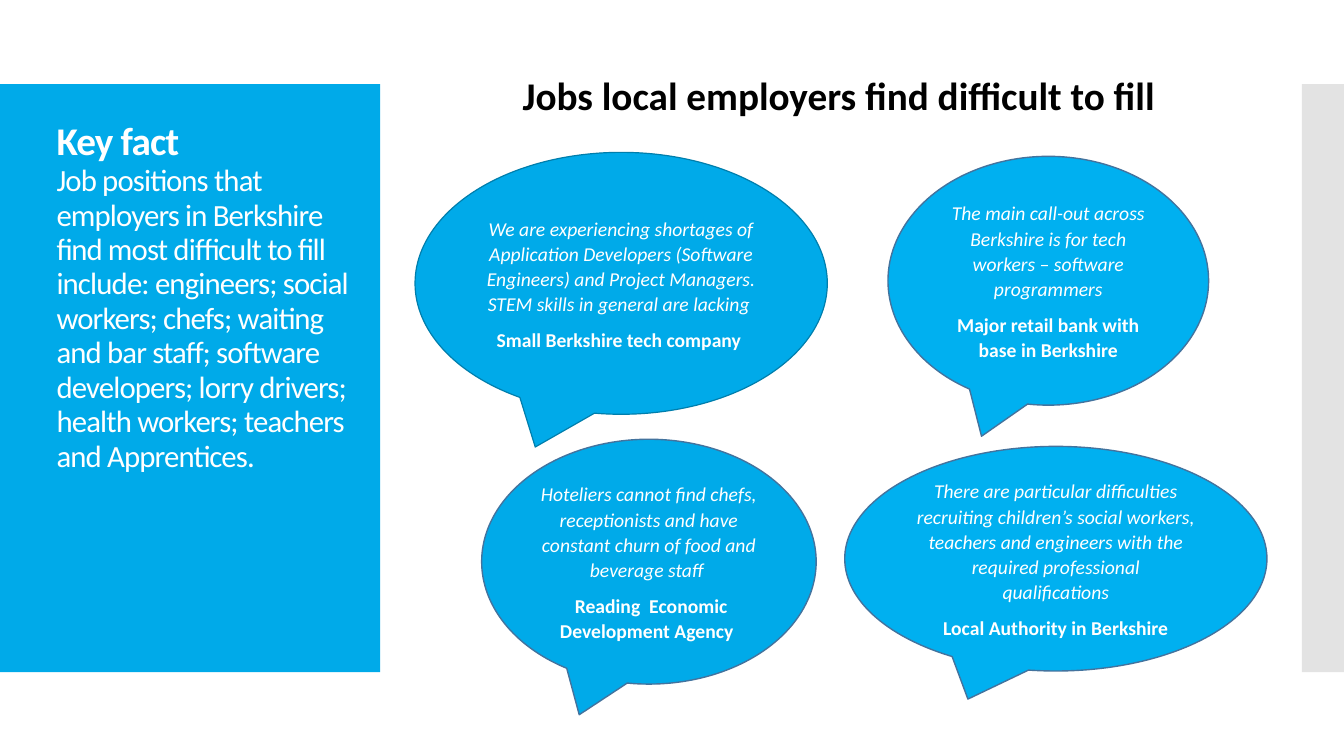
from dataclasses import dataclass

from lxml import etree
from pptx import Presentation
from pptx.dml.color import RGBColor
from pptx.enum.shapes import MSO_SHAPE
from pptx.enum.text import MSO_ANCHOR, MSO_AUTO_SIZE, PP_ALIGN
from pptx.oxml.ns import qn
from pptx.util import Cm, Pt

RECTANGLE = MSO_SHAPE.RECTANGLE
CALLOUT = MSO_SHAPE.OVAL_CALLOUT
TOP, MIDDLE = MSO_ANCHOR.TOP, MSO_ANCHOR.MIDDLE
LEFT, CENTER = PP_ALIGN.LEFT, PP_ALIGN.CENTER
NO_FIT = MSO_AUTO_SIZE.NONE
TITLE_ONLY = 5


@dataclass(frozen=True)
class Theme:
    font: str = "Calibri"
    blue: str = "00AAE9"
    sky: str = "00B0F0"
    teal_edge: str = "007EAC"
    steel_edge: str = "43739E"
    grey: str = "C8C8C8"
    white: str = "FFFFFF"
    black: str = "000000"
    heading_size: float = 28
    fact_size: float = 22
    quote_size: float = 14


class SlideBuilder:
    """Draws themed elements on one slide, with lengths in centimetres."""

    def __init__(self, slide, theme):
        self.slide = slide
        self.theme = theme

    def style(self, font, size, color, bold=False, italic=False):
        font.name = self.theme.font
        font.size = Pt(size)
        font.bold = bold
        font.italic = italic
        font.color.rgb = RGBColor.from_string(color)

    def shape(self, preset, box, fill):
        shape = self.slide.shapes.add_shape(preset, *map(Cm, box))
        shape.shadow.inherit = False
        shape.fill.solid()
        shape.fill.fore_color.rgb = RGBColor.from_string(fill)
        return shape

    def panel(self, box, fill, opacity=100):
        panel = self.shape(RECTANGLE, box, fill)
        panel.line.fill.background()
        if opacity < 100:
            color = panel.fill._xPr.find(qn("a:solidFill"))[0]
            etree.SubElement(color, qn("a:alpha")).set("val", str(opacity * 1000))
        self.slide.shapes._spTree.insert(2, panel._element)

    def key_fact(self, box, label, fact):
        title = self.slide.shapes.title
        title.left, title.top, title.width, title.height = map(Cm, box)
        frame = title.text_frame
        frame.word_wrap = True
        frame.auto_size = NO_FIT
        frame.vertical_anchor = TOP
        paragraph = frame.paragraphs[0]
        paragraph.alignment = LEFT
        paragraph.line_spacing = Pt(24.6)
        label_run = paragraph.add_run()
        paragraph.add_line_break()
        fact_run = paragraph.add_run()
        label_run.text, fact_run.text = label, fact
        self.style(label_run.font, self.theme.heading_size, self.theme.white, bold=True)
        self.style(fact_run.font, self.theme.fact_size, self.theme.white)
        for run in (label_run, fact_run):
            run.font._element.set("spc", "-60")

    def heading(self, box, text):
        frame = self.slide.shapes.add_textbox(*map(Cm, box)).text_frame
        frame.word_wrap = True
        paragraph = frame.paragraphs[0]
        paragraph.text = text
        paragraph.alignment = CENTER
        self.style(paragraph.font, self.theme.heading_size, self.theme.black, bold=True)

    def quote(self, box, fill, edge, edge_width, words, speaker):
        bubble = self.shape(CALLOUT, box, fill)
        bubble.line.color.rgb = RGBColor.from_string(edge)
        bubble.line.width = Pt(edge_width)
        frame = bubble.text_frame
        frame.word_wrap = True
        frame.vertical_anchor = MIDDLE
        for paragraph, text, is_speaker in (
            (frame.paragraphs[0], words, False),
            (frame.add_paragraph(), speaker, True),
        ):
            paragraph.text = text
            paragraph.alignment = CENTER
            paragraph.line_spacing = 1.07
            paragraph.space_after = Pt(8)
            self.style(paragraph.font, self.theme.quote_size, self.theme.white,
                       bold=is_speaker, italic=not is_speaker)


def main():
    theme = Theme()
    deck = Presentation()
    deck.slide_width, deck.slide_height = Cm(33.87), Cm(19.05)
    builder = SlideBuilder(deck.slides.add_slide(deck.slide_layouts[TITLE_ONLY]), theme)

    builder.panel((0, 2.12, 9.58, 14.82), theme.blue)
    builder.panel((32.81, 2.12, 1.06, 14.82), theme.grey, opacity=50)
    builder.key_fact(
        (1.17, 3.12, 8.1, 12.78), "Key fact",
        "Job positions that employers in Berkshire find most difficult to fill include: "
        "engineers; social workers; chefs; waiting and bar staff; software developers; "
        "lorry drivers; health workers; teachers and Apprentices.")

    quotes = (
        ((10.46, 3.84, 10.39, 6.6), theme.blue, theme.teal_edge, 0.85,
         "We are experiencing shortages of Application Developers (Software Engineers) "
         "and Project Managers. STEM skills in general are lacking ",
         "Small Berkshire tech company "),
        ((22.38, 3.94, 8.08, 6.27), theme.sky, theme.steel_edge, 1,
         "The main call-out across Berkshire is for tech workers – software programmers",
         "Major retail bank with base in Berkshire"),
        ((12.14, 11.07, 8.43, 6.17), theme.blue, theme.steel_edge, 1,
         "Hoteliers cannot find chefs, receptionists and have constant churn of food "
         "and beverage staff ",
         " Reading  Economic Development Agency "),
        ((21.29, 11.25, 10.64, 5.66), theme.sky, theme.steel_edge, 1,
         "There are particular difficulties recruiting children’s social workers, "
         "teachers and engineers with the required professional qualifications",
         "Local Authority in Berkshire"),
    )
    for quote in quotes:
        builder.quote(*quote)

    builder.heading((10.08, 1.68, 22.33, 1.45),
                    "Jobs local employers find difficult to fill ")
    deck.save("out.pptx")


if __name__ == "__main__":
    main()
